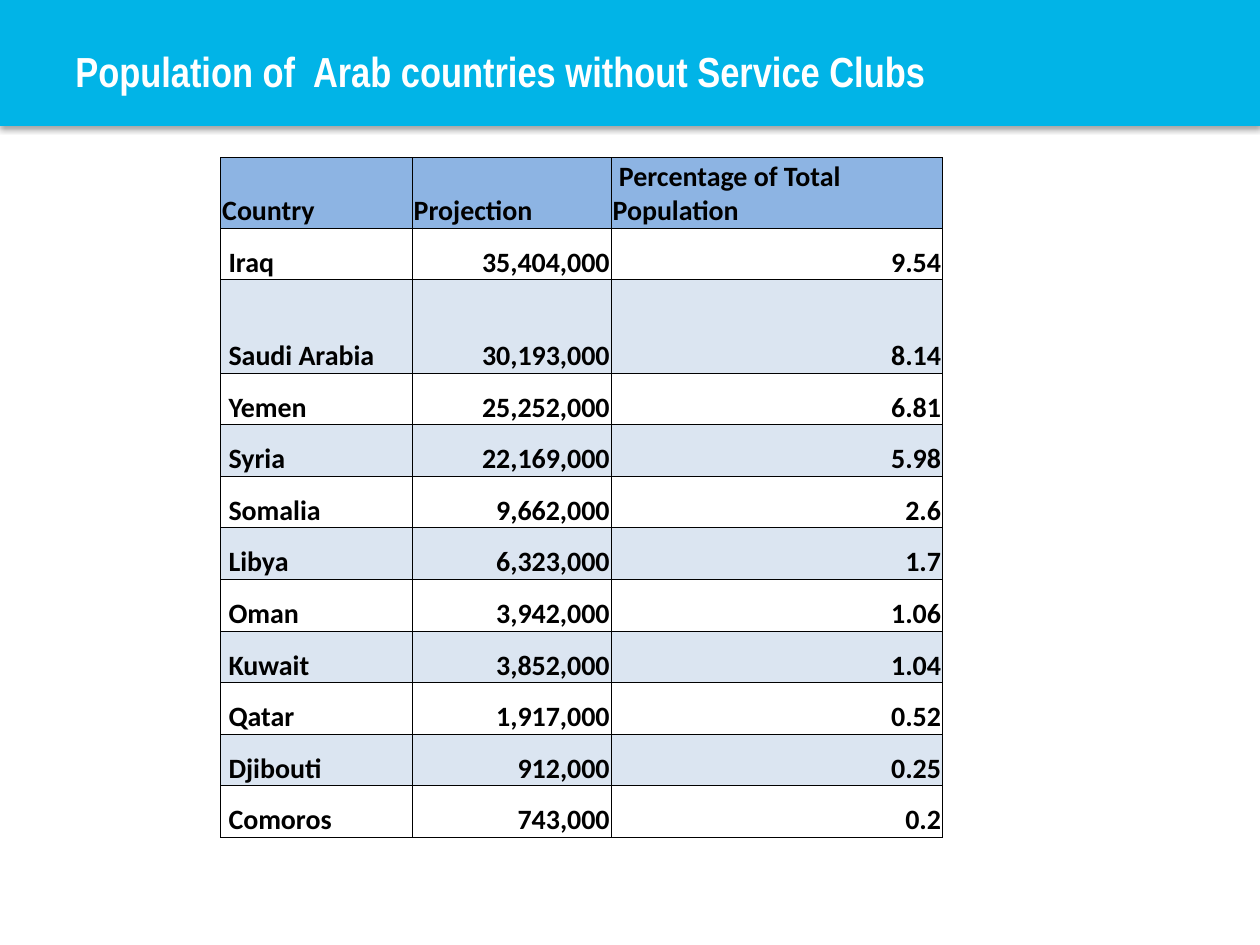
from lxml.etree import SubElement as Sub
from pptx import Presentation
from pptx.dml.color import RGBColor as RGB
from pptx.enum.shapes import MSO_SHAPE as Shape
from pptx.enum.text import MSO_ANCHOR as Anchor, PP_ALIGN as Align
from pptx.oxml.ns import qn
from pptx.util import Cm, Pt

CYAN = RGB(0x01, 0xB4, 0xE7)
WHITE = RGB(0xFF, 0xFF, 0xFF)
BLACK = RGB(0x00, 0x00, 0x00)
BLUE = RGB(0x8D, 0xB4, 0xE3)
PALE = RGB(0xDB, 0xE5, 0xF1)

TITLE = "Population of  Arab countries without Service Clubs"
WIDTHS = (3.86, 4.01, 6.68)
HEAD, TALL, ROW = 1.42, 1.88, 1.04
ROWS = (
    ("Country", "Projection", " Percentage of Total  Population"),
    (" Iraq", "35,404,000", "9.54"),
    (" Saudi Arabia", "30,193,000", "8.14"),
    (" Yemen", "25,252,000", "6.81"),
    (" Syria", "22,169,000", "5.98"),
    (" Somalia", "9,662,000", "2.6"),
    (" Libya", "6,323,000", "1.7"),
    (" Oman", "3,942,000", "1.06"),
    (" Kuwait", "3,852,000", "1.04"),
    (" Qatar", "1,917,000", "0.52"),
    (" Djibouti", "912,000", "0.25"),
    (" Comoros", "743,000", "0.2"),
)


def add_run(para, text, size, face, color):
    """Add one bold run to a paragraph."""
    run = para.add_run()
    run.text = text
    font = run.font
    font.size, font.name, font.bold = Pt(size), face, True
    font.color.rgb = color


def add_shade(shape):
    """Give a shape a soft shadow straight below it."""
    shape.shadow.inherit = False
    glow = Sub(shape.element.spPr.find(qn("a:effectLst")), qn("a:outerShdw"),
               blurRad=str(Pt(3.1)), dist=str(Pt(1.8)), dir="5400000",
               algn="t", rotWithShape="0")
    tint = Sub(glow, qn("a:srgbClr"), val=str(BLACK))
    Sub(tint, qn("a:alpha"), val="35000")


def add_bar(slide):
    """Draw the colour band across the top."""
    bar = slide.shapes.add_shape(Shape.RECTANGLE, 0, 0, Cm(25.4), Cm(2.54))
    bar.fill.solid()
    bar.fill.fore_color.rgb = CYAN
    bar.line.fill.background()
    add_shade(bar)


def add_title(slide):
    """Write the title on the band."""
    box = slide.shapes.add_textbox(Cm(1.27), Cm(0.76), Cm(20.52), Cm(1.35))
    frame = box.text_frame
    frame.word_wrap = True
    frame.vertical_anchor = Anchor.MIDDLE
    add_run(frame.paragraphs[0], TITLE, 24, "Arial Narrow", WHITE)


def add_edges(cell):
    """Put a thin black line on all four sides of a cell."""
    props = cell._tc.get_or_add_tcPr()
    for side in ("lnL", "lnR", "lnT", "lnB"):
        line = Sub(props, qn(f"a:{side}"), w=str(Pt(0.5)))
        fill = Sub(line, qn("a:solidFill"))
        Sub(fill, qn("a:srgbClr"), val=str(BLACK))


def set_cell(cell, text, color, align):
    """Fill, frame and write one table cell."""
    cell.margin_left = cell.margin_right = cell.margin_top = Cm(0.03)
    cell.margin_bottom = 0
    cell.vertical_anchor = Anchor.BOTTOM
    add_edges(cell)
    if color is None:
        cell.fill.background()
    else:
        cell.fill.solid()
        cell.fill.fore_color.rgb = color
    para = cell.text_frame.paragraphs[0]
    para.alignment = align
    add_run(para, text, 16, "Calibri", BLACK)


def add_grid(slide):
    """Build the table of countries."""
    highs = [HEAD, ROW, TALL] + [ROW] * (len(ROWS) - 3)
    grid = slide.shapes.add_table(
        len(ROWS), len(WIDTHS), Cm(4.45), Cm(3.18),
        Cm(sum(WIDTHS)), Cm(sum(highs))).table
    for col, width in zip(grid.columns, WIDTHS):
        col.width = Cm(width)
    for r, (row, high) in enumerate(zip(ROWS, highs)):
        grid.rows[r].height = Cm(high)
        color = BLUE if r == 0 else PALE if r % 2 == 0 else None
        for c, text in enumerate(row):
            align = Align.RIGHT if r and c else Align.LEFT
            set_cell(grid.cell(r, c), text, color, align)


def main():
    """Build the slide and save it."""
    deck = Presentation()
    deck.slide_width, deck.slide_height = Cm(25.4), Cm(19.05)
    slide = deck.slides.add_slide(deck.slide_layouts[6])
    add_bar(slide)
    add_title(slide)
    add_grid(slide)
    deck.save("out.pptx")


if __name__ == "__main__":
    main()
